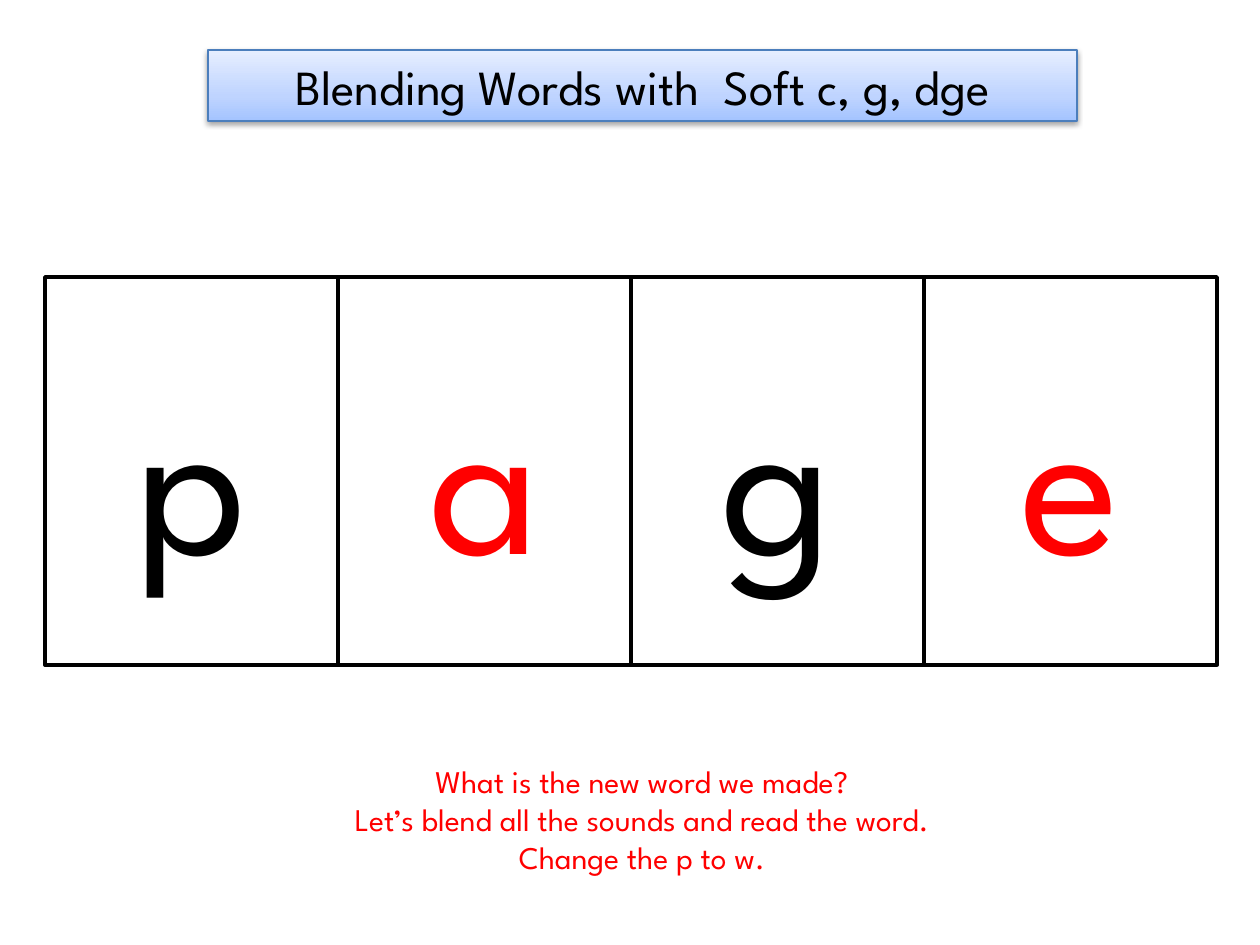
import pptx
import pptx.util
from lxml import etree
from pptx.dml.color import RGBColor
from pptx.enum.shapes import MSO_SHAPE
from pptx.enum.text import MSO_ANCHOR, MSO_AUTO_SIZE, PP_ALIGN
from pptx.oxml import parse_xml
from pptx.oxml.ns import nsdecls

EMU_PER_PX = 914400 / 126
FONT = "League Spartan"
BLACK = RGBColor(0x00, 0x00, 0x00)
WHITE = RGBColor(0xFF, 0xFF, 0xFF)
RED = RGBColor(0xFF, 0x00, 0x00)
BANNER_BORDER = RGBColor(0x4B, 0x7E, 0xBC)
BANNER_STOPS = [
    (0, RGBColor(0xA4, 0xC4, 0xFF)),
    (35, RGBColor(0xBF, 0xD4, 0xFF)),
    (100, RGBColor(0xE6, 0xEE, 0xFF)),
]


def box(*lengths):
    return [round(length * EMU_PER_PX) for length in lengths]


def write_text(shape, text, size=18, color=BLACK, anchor=MSO_ANCHOR.MIDDLE):
    frame = shape.text_frame
    frame.word_wrap = True
    frame.vertical_anchor = anchor
    frame.text = text
    for paragraph in frame.paragraphs:
        paragraph.alignment = PP_ALIGN.CENTER
        font = paragraph.runs[0].font
        font.name = FONT
        font.size = pptx.util.Pt(size)
        font.color.rgb = color


presentation = pptx.Presentation()
presentation.slide_width, presentation.slide_height = box(1260, 945)
slide = presentation.slides.add_slide(presentation.slide_layouts[6])

# Letter cards: vowels in red
card_width = 293
for index, letter in enumerate("page"):
    card = slide.shapes.add_shape(
        MSO_SHAPE.RECTANGLE, *box(45 + index * card_width, 277, card_width, 388))
    card.shadow.inherit = False
    card.fill.solid()
    card.fill.fore_color.rgb = WHITE
    card.line.color.rgb = BLACK
    card.line.width = pptx.util.Pt(2)
    write_text(card, letter, size=120, color=RED if letter in "aeiou" else BLACK)

# Questions
questions = slide.shapes.add_textbox(*box(203, 756, 878, 127))
write_text(
    questions,
    "What is the new word we made?\n"
    "Let’s blend all the sounds and read the word.\n"
    "Change the p to w.",
    color=RED, anchor=MSO_ANCHOR.TOP)
questions.text_frame.auto_size = MSO_AUTO_SIZE.SHAPE_TO_FIT_TEXT

# Title banner
banner = slide.shapes.add_shape(MSO_SHAPE.RECTANGLE, *box(208, 50, 869, 71))
banner.line.color.rgb = BANNER_BORDER
banner.line.width = pptx.util.Pt(0.75)
write_text(banner, "Blending Words with  Soft c, g, dge", size=28)

# Banner gradient, from bottom to top
banner.fill.gradient()
banner.fill.gradient_angle = 90
stop_list = banner.fill.gradient_stops and banner.element.spPr.find(
    ".//" + pptx.oxml.ns.qn("a:gsLst"))
for stop in list(stop_list):
    stop_list.remove(stop)
for position, color in BANNER_STOPS:
    stop_list.append(parse_xml(
        f'<a:gs {nsdecls("a")} pos="{position * 1000}"><a:srgbClr val="{color}"/></a:gs>'))

# Banner shadow
banner.shadow.inherit = False
effects = banner.element.spPr.find(pptx.oxml.ns.qn("a:effectLst"))
shadow = etree.SubElement(
    effects, pptx.oxml.ns.qn("a:outerShdw"),
    blurRad=str(pptx.util.Pt(3.1)), dist=str(pptx.util.Pt(1.6)),
    dir="5400000", rotWithShape="0")
shadow_color = etree.SubElement(shadow, pptx.oxml.ns.qn("a:srgbClr"), val=str(BLACK))
etree.SubElement(shadow_color, pptx.oxml.ns.qn("a:alpha"), val="38000")

presentation.save("out.pptx")
